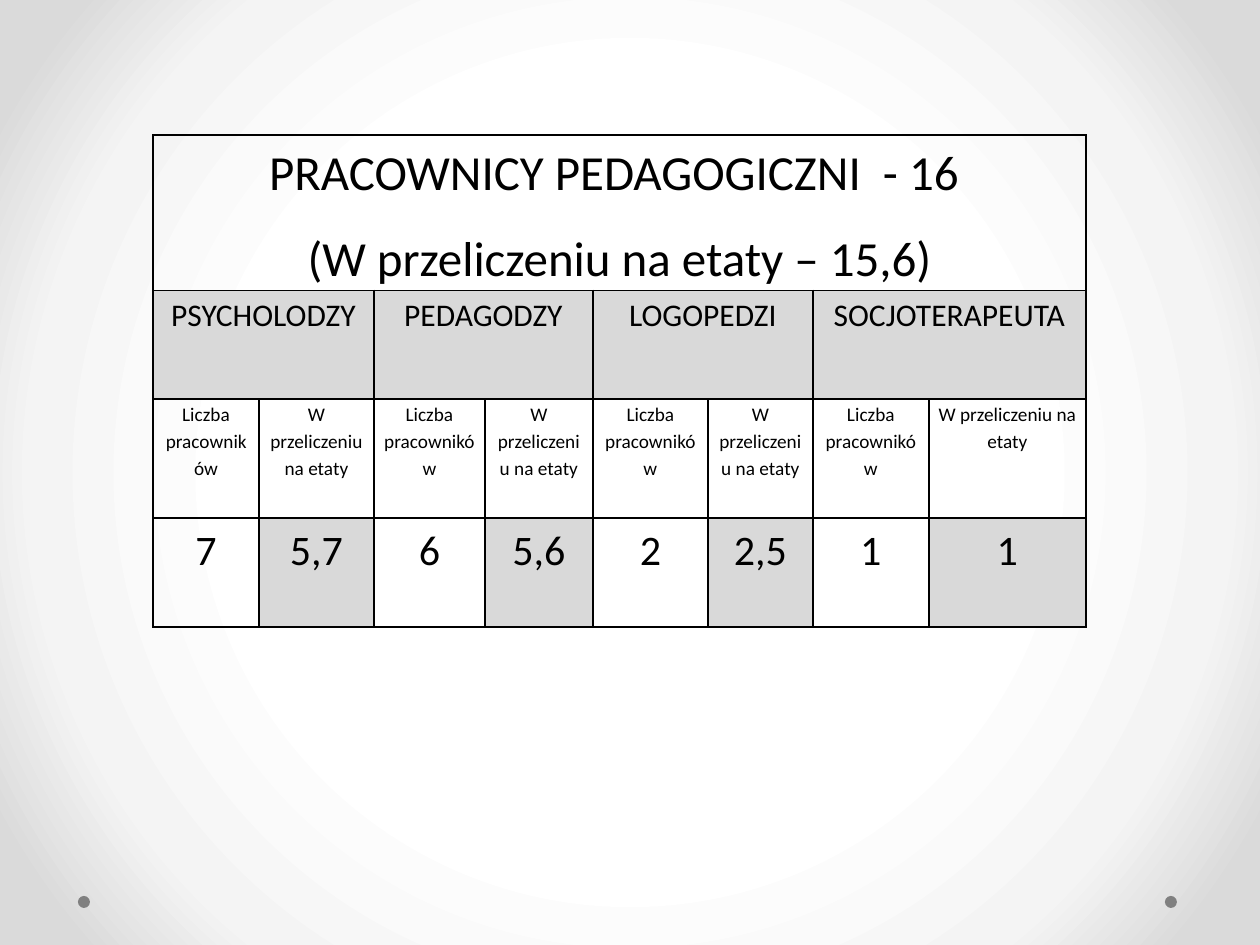
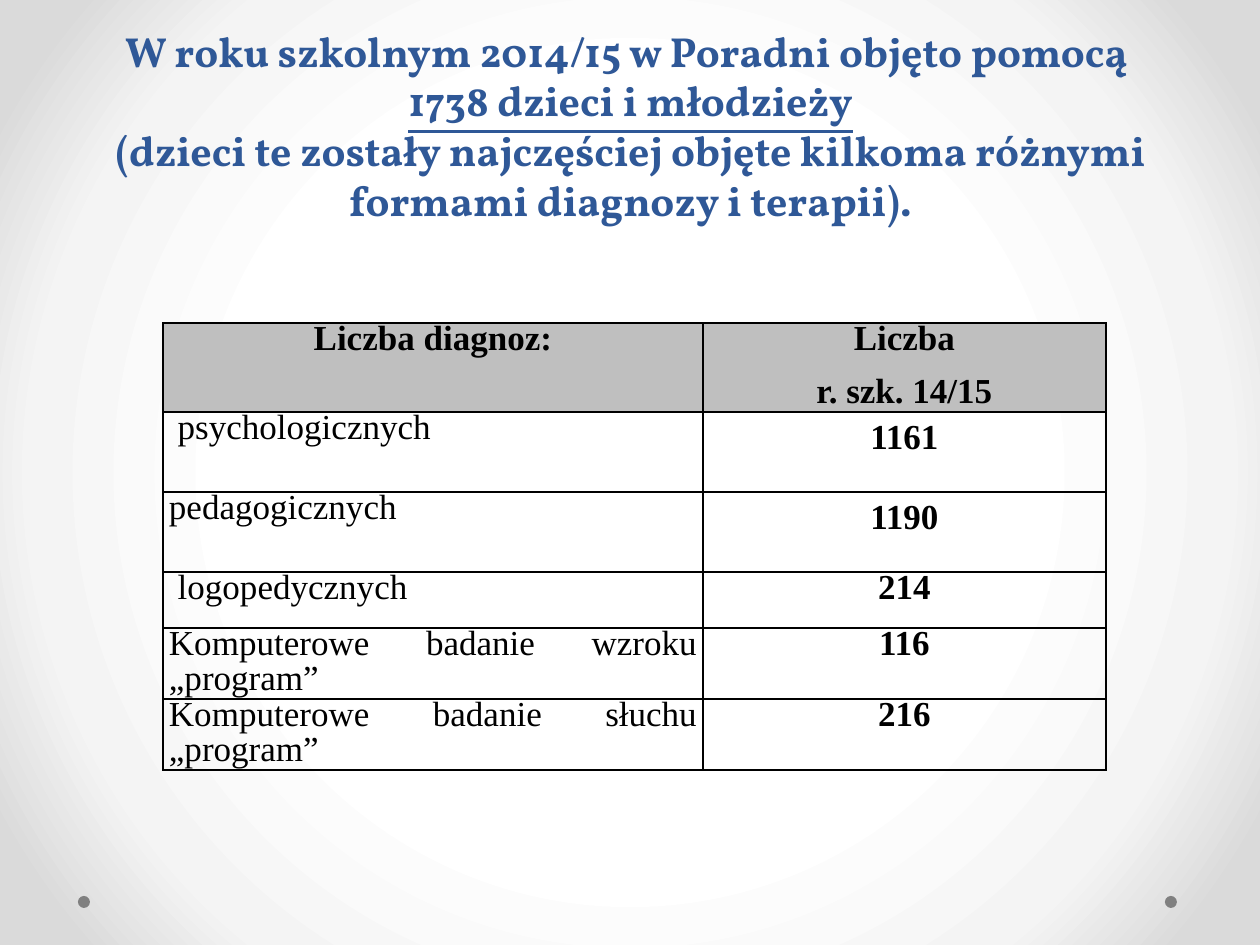
"""Build two slides on counselling centre staff and diagnoses."""
from pptx import Presentation
from pptx.dml.color import RGBColor
from pptx.enum.shapes import MSO_SHAPE
from pptx.enum.text import MSO_ANCHOR, PP_ALIGN
from pptx.oxml import parse_xml
from pptx.oxml.ns import nsdecls, qn
from pptx.util import Pt

PX = 914400 // 126
SLIDE_SIZE = (1260, 945)
BLACK = RGBColor(0x00, 0x00, 0x00)
BLUE = RGBColor(0x2F, 0x58, 0x97)
DOT_GREY = RGBColor(0x80, 0x80, 0x80)
PALE_GREY = RGBColor(0xD9, 0xD9, 0xD9)
HEADER_GREY = RGBColor(0xBF, 0xBF, 0xBF)
BACKGROUND_STOPS = [
    (50, RGBColor(0xFF, 0xFF, 0xFF)),
    (76, RGBColor(0xF4, 0xF4, 0xF4)),
    (92, RGBColor(0xDA, 0xDA, 0xDA)),
]
DOT_LEFTS = (78, 1165)
DOT_TOP, DOT_SIZE = 896, 12

STAFF_HEADING = ["PRACOWNICY PEDAGOGICZNI  - 16 ", "(W przeliczeniu na etaty – 15,6)"]
STAFF_MEASURES = ["Liczba pracowników", "W przeliczeniu na etaty"]
STAFF = [
    ("PSYCHOLODZY", "7", "5,7"),
    ("PEDAGODZY", "6", "5,6"),
    ("LOGOPEDZI", "2", "2,5"),
    ("SOCJOTERAPEUTA", "1", "1"),
]
STAFF_FRAME = {
    "left": 153, "top": 135, "margin": 9,
    "columns": [106, 115, 111, 108, 115, 105, 116, 157],
    "rows": [155, 109, 119, 109],
}
STAFF_PARAGRAPH = {"alignment": PP_ALIGN.CENTER, "line_spacing": 1.15, "space_after": Pt(10)}
STAFF_SIZES = [28, 18, 11, 24]

TITLE_BOX = (64, 0, 1133, 275)
TITLE_LINES = [
    ("W roku szkolnym 2014/15 w Poradni objęto pomocą ", False),
    ("1738 dzieci i młodzieży", True),
    ("(dzieci te zostały najczęściej objęte kilkoma różnymi formami diagnozy i terapii).", False),
]
TITLE_FONT = {"name": "Vollkorn", "size": Pt(24), "bold": True}

DIAGNOSES_HEADING = [["Liczba diagnoz:"], ["Liczba", "r. szk. 14/15"]]
DIAGNOSES = [
    (" psychologicznych", "1161", 1.15),
    ("pedagogicznych", "1190", 1.15),
    (" logopedycznych", "214", Pt(20)),
    ("Komputerowe badanie wzroku „program”", "116", Pt(20)),
    ("Komputerowe badanie słuchu „program”", "216", Pt(20)),
]
DIAGNOSES_FRAME = {
    "left": 163, "top": 323, "margin": 6,
    "columns": [540, 403],
    "rows": [89, 80, 80, 56, 71, 71],
}
DIAGNOSES_FONT = {"name": "Times New Roman", "size": Pt(20)}


def set_values(target, values):
    for name, value in values.items():
        setattr(target, name, value)


def add_run(paragraph, text, font_values, color):
    run = paragraph.add_run()
    run.text = text
    set_values(run.font, font_values)
    run.font.color.rgb = color


def add_background(slide):
    slide.background.fill.solid()
    solid = slide.element.find(".//" + qn("a:solidFill"))
    stops = "".join(
        f'<a:gs pos="{position * 1000}"><a:srgbClr val="{color}"/></a:gs>'
        for position, color in BACKGROUND_STOPS
    )
    gradient = parse_xml(
        f'<a:gradFill {nsdecls("a")} rotWithShape="1"><a:gsLst>{stops}</a:gsLst>'
        '<a:path path="circle"><a:fillToRect l="50000" t="50000" r="50000" b="50000"/>'
        '</a:path></a:gradFill>'
    )
    solid.getparent().replace(solid, gradient)


def add_base_slide(presentation):
    slide = presentation.slides.add_slide(presentation.slide_layouts[6])
    add_background(slide)
    for left in DOT_LEFTS:
        dot = slide.shapes.add_shape(
            MSO_SHAPE.OVAL, left * PX, DOT_TOP * PX, DOT_SIZE * PX, DOT_SIZE * PX
        )
        dot.shadow.inherit = False
        dot.fill.solid()
        dot.fill.fore_color.rgb = DOT_GREY
        dot.line.fill.background()
    return slide


def add_borders(cell):
    properties = cell._tc.get_or_add_tcPr()
    for side in "LRTB":
        properties.append(parse_xml(
            f'<a:ln{side} {nsdecls("a")} w="12700"><a:solidFill>'
            f'<a:srgbClr val="{BLACK}"/></a:solidFill></a:ln{side}>'
        ))


def add_grid(slide, frame):
    columns, rows = frame["columns"], frame["rows"]
    table = slide.shapes.add_table(
        len(rows), len(columns), frame["left"] * PX, frame["top"] * PX,
        sum(columns) * PX, sum(rows) * PX,
    ).table
    set_values(table, {"first_row": False, "horz_banding": False})
    for column, width in zip(table.columns, columns):
        column.width = width * PX
    for row, height in zip(table.rows, rows):
        row.height = height * PX
    side = frame["margin"] * PX
    margins = {"margin_left": side, "margin_right": side, "margin_top": 0, "margin_bottom": 0}
    for cell in table.iter_cells():
        set_values(cell, margins)
        add_borders(cell)
        cell.fill.background()
    return table


def fill_cell(cell, texts, paragraph_values, font_values, shade=None):
    if shade is not None:
        cell.fill.solid()
        cell.fill.fore_color.rgb = shade
    frame = cell.text_frame
    for index, text in enumerate(texts):
        paragraph = frame.add_paragraph() if index else frame.paragraphs[0]
        set_values(paragraph, paragraph_values)
        add_run(paragraph, text, font_values, BLACK)


def add_staff_table(slide):
    table = add_grid(slide, STAFF_FRAME)
    heading, group, measure, count = [
        {"name": "Calibri", "size": Pt(size)} for size in STAFF_SIZES
    ]
    table.cell(0, 0).merge(table.cell(0, len(STAFF_FRAME["columns"]) - 1))
    fill_cell(table.cell(0, 0), STAFF_HEADING, STAFF_PARAGRAPH, heading)
    for index, (name, *values) in enumerate(STAFF):
        first = 2 * index
        table.cell(1, first).merge(table.cell(1, first + 1))
        fill_cell(table.cell(1, first), [name], STAFF_PARAGRAPH, group, PALE_GREY)
        columns = zip(STAFF_MEASURES, values, (None, PALE_GREY))
        for column, (label, value, shade) in enumerate(columns, first):
            fill_cell(table.cell(2, column), [label], STAFF_PARAGRAPH, measure)
            fill_cell(table.cell(3, column), [value], STAFF_PARAGRAPH, count, shade)


def add_title(slide):
    title = slide.shapes.add_textbox(*(length * PX for length in TITLE_BOX))
    frame = title.text_frame
    set_values(frame, {
        "word_wrap": True, "vertical_anchor": MSO_ANCHOR.BOTTOM, "margin_bottom": 50 * PX,
    })
    paragraph = frame.paragraphs[0]
    set_values(paragraph, {"alignment": PP_ALIGN.CENTER, "line_spacing": Pt(28.5)})
    for index, (text, underline) in enumerate(TITLE_LINES):
        if index:
            paragraph.add_line_break()
        add_run(paragraph, text, {**TITLE_FONT, "underline": underline}, BLUE)


def add_diagnoses_table(slide):
    table = add_grid(slide, DIAGNOSES_FRAME)
    bold = {**DIAGNOSES_FONT, "bold": True}
    heading = {"alignment": PP_ALIGN.CENTER, "line_spacing": Pt(20), "space_after": Pt(10)}
    label = {"alignment": PP_ALIGN.JUSTIFY, "line_spacing": Pt(20)}
    for column, texts in enumerate(DIAGNOSES_HEADING):
        fill_cell(table.cell(0, column), texts, heading, bold, HEADER_GREY)
    for row, (name, count, spacing) in enumerate(DIAGNOSES, 1):
        number = {"alignment": PP_ALIGN.CENTER, "line_spacing": spacing}
        fill_cell(table.cell(row, 0), [name], label, DIAGNOSES_FONT)
        fill_cell(table.cell(row, 1), [count], number, bold)


def main():
    presentation = Presentation()
    presentation.slide_width, presentation.slide_height = (side * PX for side in SLIDE_SIZE)
    add_staff_table(add_base_slide(presentation))
    diagnoses_slide = add_base_slide(presentation)
    add_title(diagnoses_slide)
    add_diagnoses_table(diagnoses_slide)
    presentation.save("out.pptx")


if __name__ == "__main__":
    main()
